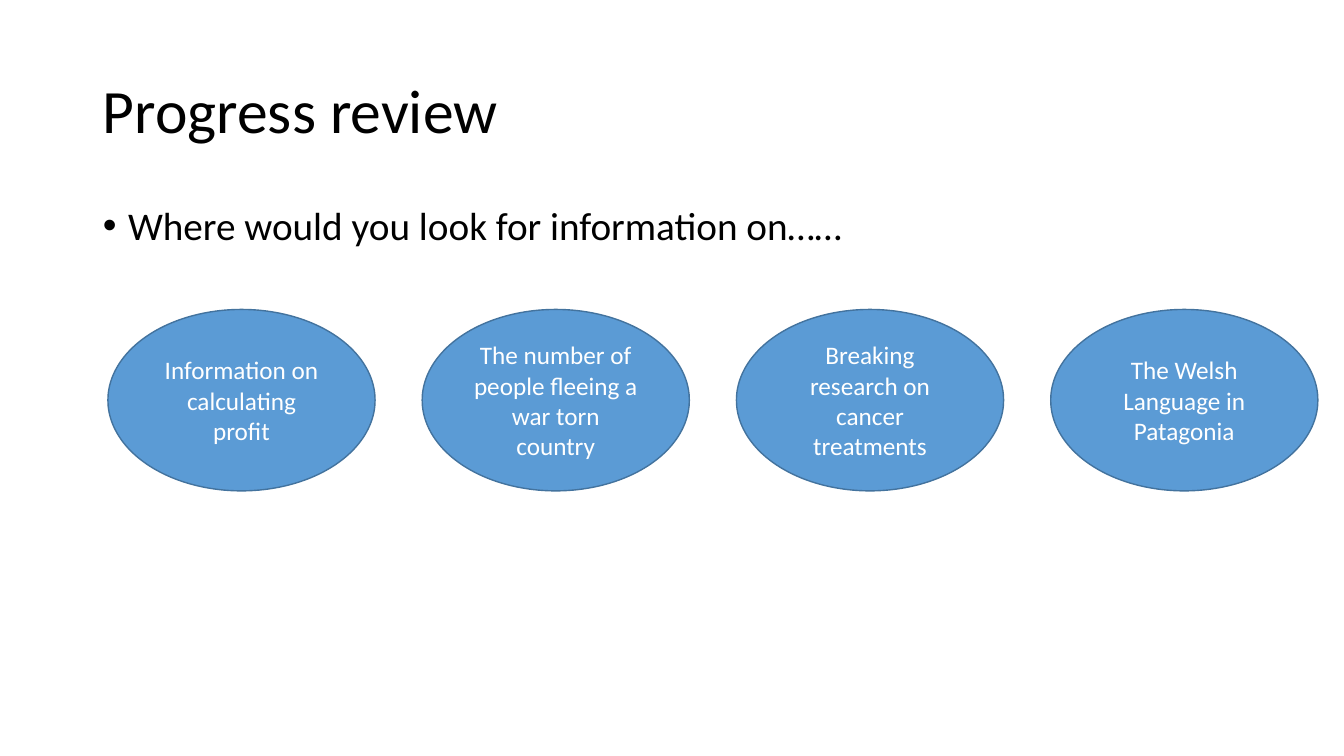
from pptx import Presentation
from pptx.dml.color import RGBColor
from pptx.enum.shapes import MSO_SHAPE
from pptx.enum.text import MSO_ANCHOR, MSO_AUTO_SIZE, PP_ALIGN
from pptx.util import Inches, Pt

OVAL = MSO_SHAPE.OVAL
TOP, MIDDLE = MSO_ANCHOR.TOP, MSO_ANCHOR.MIDDLE
LEFT, CENTER = PP_ALIGN.LEFT, PP_ALIGN.CENTER
NO_AUTOFIT = MSO_AUTO_SIZE.NONE

COLORS = {"text": "000000", "oval": "5B9BD5", "outline": "43739E", "oval_text": "FFFFFF"}
TOPICS = [
    "Information on calculating profit",
    "The number of people fleeing a war torn country",
    "Breaking research on cancer treatments",
    "The Welsh Language in Patagonia",
]


def place(shape, left, top, width, height):
    box = {"left": left, "top": top, "width": width, "height": height}
    for name, value in box.items():
        setattr(shape, name, Inches(value))


def write(shape, text, size, color, anchor, paragraph_format):
    frame = shape.text_frame
    frame_format = {"text": text, "word_wrap": True, "auto_size": NO_AUTOFIT,
                    "vertical_anchor": anchor}
    for name, value in frame_format.items():
        setattr(frame, name, value)
    paragraph = frame.paragraphs[0]
    for name, value in paragraph_format.items():
        setattr(paragraph, name, value)
    font = paragraph.runs[0].font
    font.name = "Calibri"
    font.size = Pt(size)
    font.color.rgb = RGBColor.from_string(COLORS[color])
    return paragraph


presentation = Presentation()
presentation.slide_width = Inches(13.33)
presentation.slide_height = Inches(7.5)
slide = presentation.slides.add_slide(presentation.slide_layouts[1])

# Title
title = slide.shapes.title
place(title, 0.92, 0.4, 11.5, 1.45)
write(title, "Progress review", 44, "text", MIDDLE,
      {"alignment": LEFT, "line_spacing": 0.9})

# Bulleted question
question = slide.placeholders[1]
place(question, 0.92, 2, 11.5, 0.64)
bullet = write(question, "Where would you look for information on……", 28, "text", TOP,
               {"alignment": LEFT, "line_spacing": 0.9, "space_before": Pt(10)})
bullet_properties = bullet._p.get_or_add_pPr()
bullet_properties.set("marL", str(Inches(0.25)))
bullet_properties.set("indent", str(Inches(-0.25)))

# Row of topic ovals
for index, topic in enumerate(TOPICS):
    left = 1.07 + index * 3.117
    oval = slide.shapes.add_shape(OVAL, Inches(left), Inches(3.07), Inches(2.65), Inches(1.8))
    oval.shadow.inherit = False
    oval.fill.solid()
    oval.fill.fore_color.rgb = RGBColor.from_string(COLORS["oval"])
    oval.line.color.rgb = RGBColor.from_string(COLORS["outline"])
    oval.line.width = Pt(1)
    write(oval, topic, 18, "oval_text", MIDDLE, {"alignment": CENTER})

presentation.save("out.pptx")
